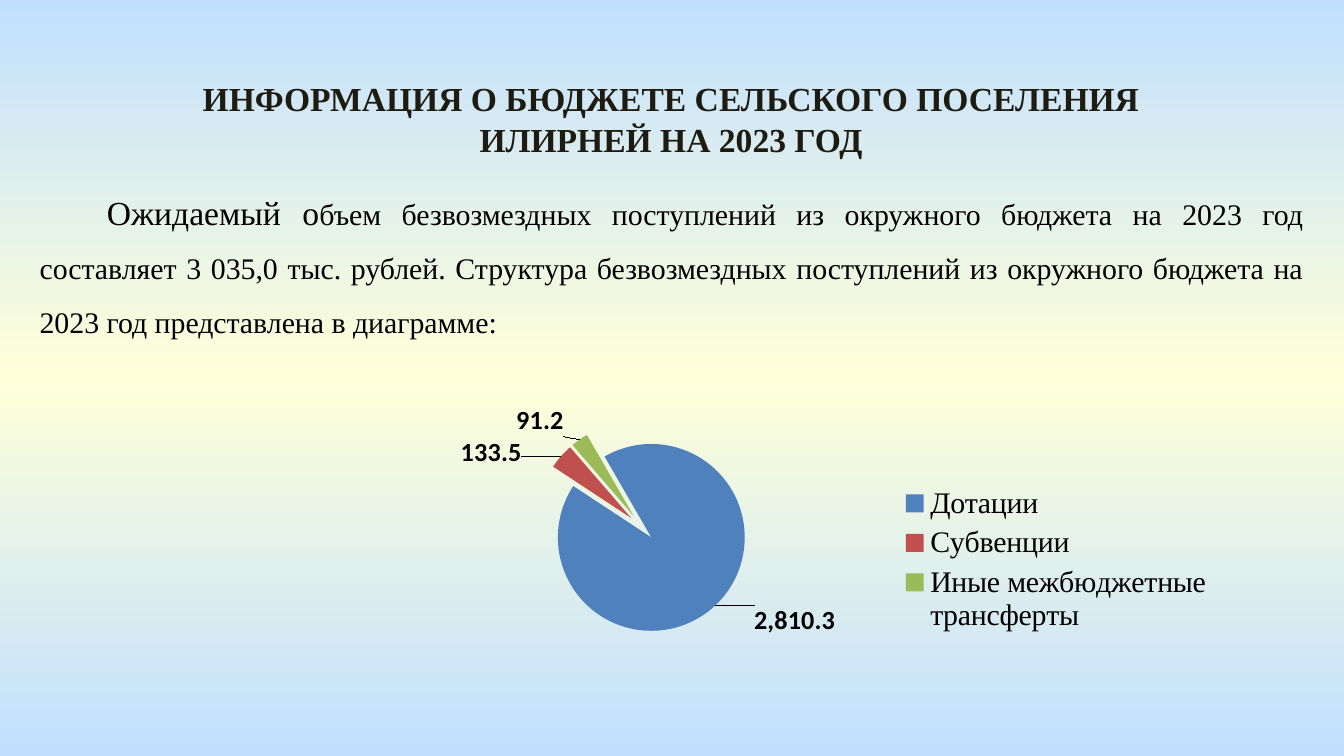
import copy

import pptx
import pptx.chart.data
import pptx.dml.color
import pptx.enum.chart
import pptx.enum.text
import pptx.oxml
import pptx.oxml.ns
import pptx.util
from pptx.util import Cm, Pt

RGBColor = pptx.dml.color.RGBColor
Align = pptx.enum.text.PP_ALIGN
Anchor = pptx.enum.text.MSO_ANCHOR

# Content
TITLE = "ИНФОРМАЦИЯ О БЮДЖЕТЕ СЕЛЬСКОГО ПОСЕЛЕНИЯ ИЛИРНЕЙ НА 2023 ГОД"
INTRO = [  # text, size, font
    ("\t", 18, "Calibri"),
    ("Ожидаемый о", 18, "Times New Roman"),
    ("бъем безвозмездных поступлений из окружного бюджета на 2023 год "
     "составляет 3 035,0 тыс. рублей. Структура безвозмездных поступлений "
     "из окружного бюджета на 2023 год представлена в диаграмме:",
     16, "Times New Roman"),
]
BLUE = RGBColor(0x4F, 0x81, 0xBD)
RED = RGBColor(0xC0, 0x50, 0x4D)
GREEN = RGBColor(0x9B, 0xBB, 0x59)
TRANSFERS = [  # name, thousand roubles, colour, label shift as share of chart
    ("Дотации", 2810.3, BLUE, (0.03, -0.02)),
    ("Субвенции", 133.5, RED, (-0.03, 0.05)),
    ("Иные межбюджетные трансферты", 91.2, GREEN, (-0.01, 0.01)),
]
NUMBER_FORMAT = "#,##0.0"
PLOT_AREA = {"x": 0.375, "y": 0.092, "w": 0.194, "h": 0.627}

BLACK = RGBColor(0, 0, 0)
TITLE_COLOR = RGBColor(0x1E, 0x1C, 0x11)
SKY = RGBColor(0xC1, 0xE0, 0xFF)
CREAM = RGBColor(0xFF, 0xFF, 0xD9)


def style(font, size, name, color=BLACK, bold=False):
    font.size, font.name, font.bold = Pt(size), name, bold
    font.color.rgb = color


def chart_xml(tag, content="", attributes=""):
    return pptx.oxml.parse_xml(
        f"<c:{tag} {pptx.oxml.ns.nsdecls('c')} {attributes}>{content}</c:{tag}>")


def manual_layout(settings):
    values = "".join(f'<c:{key} val="{value}"/>' for key, value in settings.items())
    return chart_xml("layout", f"<c:manualLayout>{values}</c:manualLayout>")


presentation = pptx.Presentation()
presentation.slide_width, presentation.slide_height = Cm(25.4), Cm(14.29)
slide = presentation.slides.add_slide(presentation.slide_layouts[5])

# Background: sky, cream, sky from top to bottom
backdrop = slide.background.fill
backdrop.gradient()
backdrop.gradient_angle = 270
first_stop = backdrop.gradient_stops[0]
first_stop._gs.addnext(copy.deepcopy(first_stop._gs))
for stop, position, color in zip(backdrop.gradient_stops, (0, 0.5, 1), (SKY, CREAM, SKY)):
    stop.position = position
    stop.color.rgb = color

# Title
title = slide.shapes.title
title.left, title.top, title.width, title.height = Cm(2.87), Cm(1.35), Cm(19.63), Cm(1.8)
title.text_frame.text = TITLE
title.text_frame.vertical_anchor = Anchor.TOP
heading = title.text_frame.paragraphs[0]
heading.alignment = Align.CENTER
style(heading.runs[0].font, 18, "Times New Roman", TITLE_COLOR, True)

# Introduction
intro = slide.shapes.add_textbox(Cm(0.5), Cm(3.12), Cm(24.4), Cm(3.45))
intro.text_frame.word_wrap = True
sentence = intro.text_frame.paragraphs[0]
sentence.alignment = Align.JUSTIFY
sentence.line_spacing = 1.5
for text, size, font_name in INTRO:
    run = sentence.add_run()
    run.text = text
    style(run.font, size, font_name)

# Pie chart of transfers
chart_data = pptx.chart.data.CategoryChartData(number_format=NUMBER_FORMAT)
chart_data.categories = [name for name, *_ in TRANSFERS]
chart_data.add_series("Series 1", [amount for _, amount, *_ in TRANSFERS])
chart = slide.shapes.add_chart(
    pptx.enum.chart.XL_CHART_TYPE.PIE,
    Cm(2.24), Cm(7.34), Cm(20.95), Cm(6.48), chart_data).chart
chart.has_title = False
style(chart.font, 18, "Calibri")
chart.has_legend = True
chart.legend.position = pptx.enum.chart.XL_LEGEND_POSITION.RIGHT
chart.legend.include_in_layout = False
style(chart.legend.font, 16, "Times New Roman")

pie = chart.plots[0]
pie.vary_by_categories = True
series = pie.series[0]
outside = pptx.enum.chart.XL_LABEL_POSITION.OUTSIDE_END
labels = series.data_labels
labels.show_value = True
labels.number_format, labels.number_format_is_linked = NUMBER_FORMAT, False
labels.position = outside
style(labels.font, 14, "Calibri", bold=True)

# Slice colours and shifted labels
for index, (_, _, color, (shift_x, shift_y)) in enumerate(TRANSFERS):
    point = series.points[index]
    point.format.fill.solid()
    point.format.fill.fore_color.rgb = color
    style(point.data_label.font, 14, "Calibri", bold=True)
    point.data_label.position = outside
    label_index = series._element.xpath(f"c:dLbls/c:dLbl/c:idx[@val='{index}']")[0]
    layout = manual_layout({"x": shift_x, "y": shift_y})
    label_index.addnext(layout)
    layout.addnext(chart_xml(
        "numFmt", attributes=f'formatCode="{NUMBER_FORMAT}" sourceLinked="0"'))

# Exploded slices, rotation and plot position
series._element.xpath("c:dPt")[0].addprevious(chart_xml("explosion", attributes='val="15"'))
for old_angle in pie._element.xpath("c:firstSliceAng"):
    pie._element.remove(old_angle)
pie._element.append(chart_xml("firstSliceAng", attributes='val="330"'))
plot_area = pie._element.getparent()
for old_layout in plot_area.xpath("c:layout"):
    plot_area.remove(old_layout)
plot_area.insert(0, manual_layout(
    {"layoutTarget": "inner", "xMode": "edge", "yMode": "edge", **PLOT_AREA}))

presentation.save("out.pptx")
